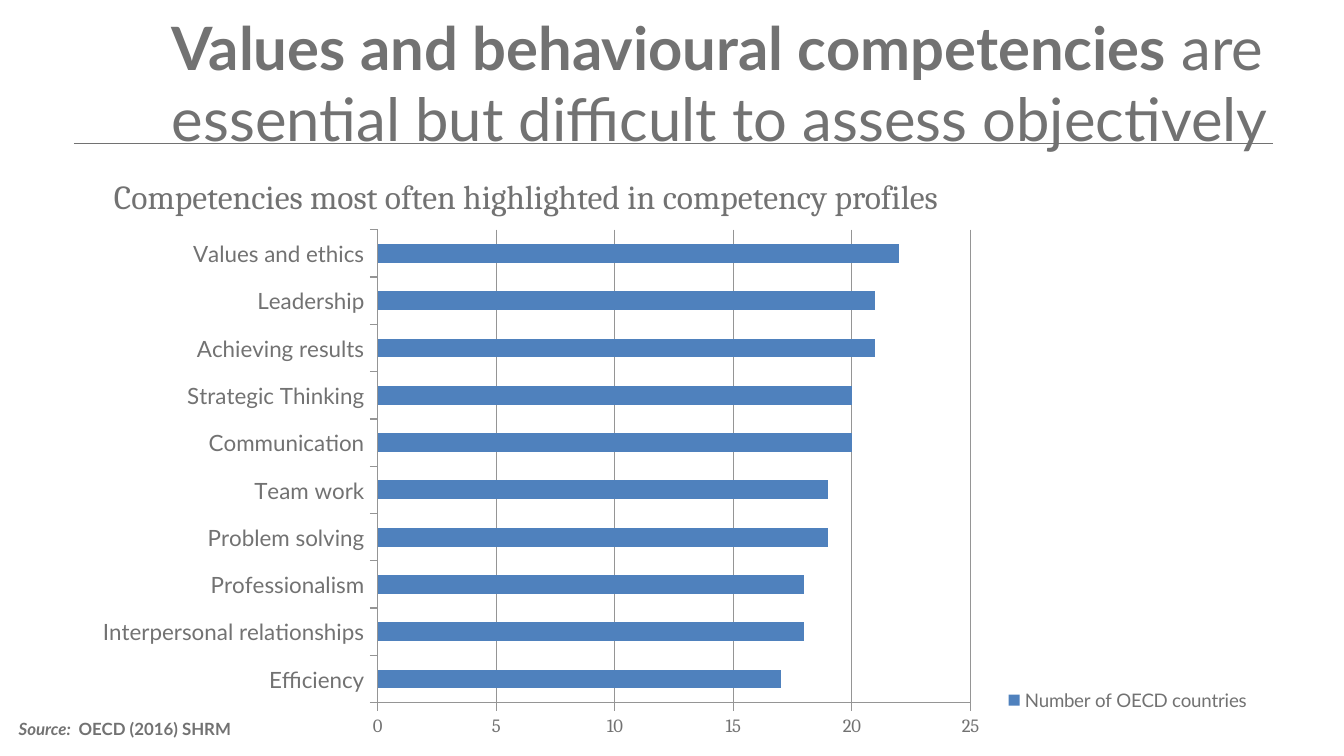
from lxml import etree
from pptx import Presentation
from pptx.chart.data import CategoryChartData
from pptx.dml.color import RGBColor
from pptx.enum.chart import XL_CHART_TYPE, XL_LEGEND_POSITION, XL_TICK_MARK
from pptx.enum.shapes import MSO_CONNECTOR
from pptx.enum.text import MSO_ANCHOR
from pptx.oxml import parse_xml
from pptx.oxml.ns import nsdecls, qn
from pptx.util import Inches, Pt

GREY = RGBColor(0x72, 0x72, 0x72)
AXIS_GREY = RGBColor(0x95, 0x95, 0x95)
BLUE = RGBColor(0x4F, 0x81, 0xBD)
SANS, SERIF = "Lato", "Cambria"
BAR_CLUSTERED = XL_CHART_TYPE.BAR_CLUSTERED
LEGEND_RIGHT = XL_LEGEND_POSITION.RIGHT
TICK_OUTSIDE = XL_TICK_MARK.OUTSIDE
STRAIGHT = MSO_CONNECTOR.STRAIGHT
TOP, MIDDLE = MSO_ANCHOR.TOP, MSO_ANCHOR.MIDDLE

COUNTRIES = {
    "Efficiency": 17,
    "Interpersonal relationships": 18,
    "Professionalism": 18,
    "Problem solving": 19,
    "Team work": 19,
    "Communication": 20,
    "Strategic Thinking": 20,
    "Achieving results": 21,
    "Leadership": 21,
    "Values and ethics": 22,
}


def set_font(font, name, size):
    font.name = name
    font.size = Pt(size)
    font.color.rgb = GREY


def add_text(slide, box, runs, name, size, anchor=TOP):
    """Add one paragraph; runs holds (text, bold, italic) tuples."""
    shape = slide.shapes.add_textbox(*map(Inches, box))
    frame = shape.text_frame
    frame.word_wrap = True
    frame.vertical_anchor = anchor
    paragraph = frame.paragraphs[0]
    set_font(paragraph.font, name, size)
    for text, bold, italic in runs:
        run = paragraph.add_run()
        run.text = text
        run.font.bold = bold
        run.font.italic = italic


def add_rule(slide, left, top, width):
    rule = slide.shapes.add_connector(
        STRAIGHT, Inches(left), Inches(top), Inches(left + width), Inches(top))
    rule.line.color.rgb = GREY
    rule.line.width = Pt(0.5)
    etree.SubElement(rule._element.spPr, qn("a:effectLst"))


def set_layout(parent, index, part, box, target=""):
    """Place a chart part, given relative to the chart's box, by hand."""
    for layout in parent.findall(qn("c:layout")):
        parent.remove(layout)
    x, y = part[0] / box[2], part[1] / box[3]
    width, height = part[2] / box[2], part[3] / box[3]
    parent.insert(index, parse_xml(
        f'<c:layout {nsdecls("c")}><c:manualLayout>{target}'
        '<c:xMode val="edge"/><c:yMode val="edge"/>'
        f'<c:x val="{x}"/><c:y val="{y}"/><c:w val="{width}"/><c:h val="{height}"/>'
        '</c:manualLayout></c:layout>'))


def style_axis(axis, name, size):
    set_font(axis.tick_labels.font, name, size)
    axis.major_tick_mark = TICK_OUTSIDE
    axis.format.line.color.rgb = AXIS_GREY


def add_competency_chart(slide, box):
    data = CategoryChartData()
    data.categories = list(COUNTRIES)
    data.add_series("Number of OECD countries", list(COUNTRIES.values()))
    chart = slide.shapes.add_chart(BAR_CLUSTERED, *map(Inches, box), data).chart
    chart.has_title = False
    set_font(chart.font, SERIF, 10)

    plot = chart.plots[0]
    plot.gap_width = 150
    plot.vary_by_categories = False
    fill = plot.series[0].format.fill
    fill.solid()
    fill.fore_color.rgb = BLUE

    style_axis(chart.category_axis, SANS, 12)
    value_axis = chart.value_axis
    style_axis(value_axis, SERIF, 10)
    value_axis.minimum_scale = 0
    value_axis.maximum_scale = 25
    value_axis.major_unit = 5
    value_axis.has_major_gridlines = True
    value_axis.major_gridlines.format.line.color.rgb = AXIS_GREY

    chart.has_legend = True
    legend = chart.legend
    legend.position = LEGEND_RIGHT
    legend.include_in_layout = False
    set_font(legend.font, SANS, 10)

    set_layout(chart._chartSpace.chart.plotArea, 0, (2.22, 0.08, 4.41, 3.52), box,
               '<c:layoutTarget val="inner"/>')
    set_layout(legend._element, 1, (6.83, 3.44, 1.94, 0.28), box)


def build_slide(presentation):
    slide = presentation.slides.add_slide(presentation.slide_layouts[6])
    add_rule(slide, 0.55, 1.07, 8.92)
    add_text(slide, (1.18, 0.19, 8.82, 0.84), [
        ("Values and behavioural competencies ", True, False),
        ("are essential but difficult to assess objectively", False, False),
    ], SANS, 32, MIDDLE)
    add_competency_chart(slide, (0.59, 1.63, 8.82, 3.93))
    add_text(slide, (0.04, 5.3, 8.35, 0.25), [
        ("Source: ", True, True),
        (" OECD (2016) SHRM", True, False),
    ], SANS, 9)
    add_text(slide, (0.75, 1.26, 9.37, 0.4), [
        ("Competencies most often highlighted in competency profiles", False, False),
    ], SERIF, 18)


def main():
    presentation = Presentation()
    presentation.slide_width = Inches(10)
    presentation.slide_height = presentation.slide_width * 9 // 16
    build_slide(presentation)
    presentation.save("out.pptx")


if __name__ == "__main__":
    main()
